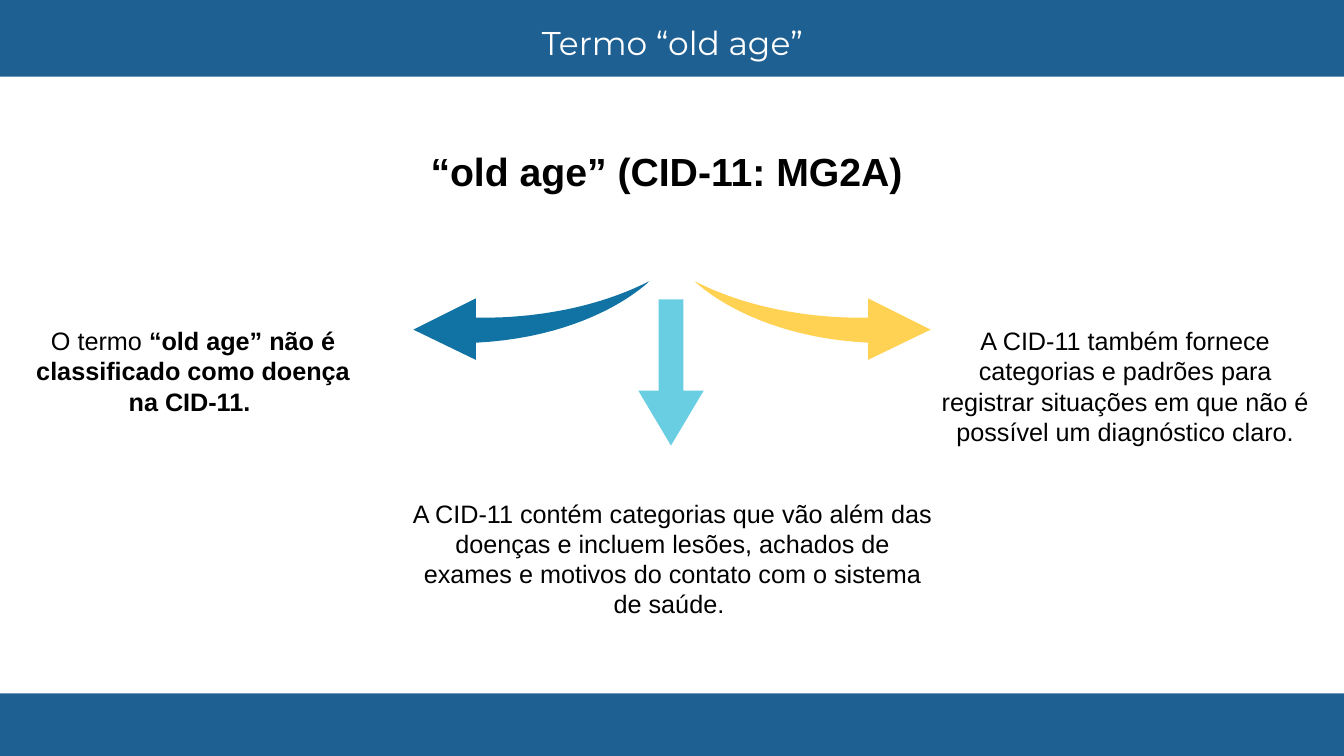
"""Build the slide on the term "old age" in CID-11."""
import dataclasses
import typing

import pptx
import pptx.dml.color
import pptx.enum.shapes
import pptx.enum.text
import pptx.util

SCALE = 9144
WIDTH, HEIGHT = 1333, 750
STEPS = 24
Point = tuple[float, float]


@dataclasses.dataclass(frozen=True)
class Theme:
    """Colours, fonts and type sizes."""
    bar: str = "1F6093"
    left: str = "1073A3"
    right: str = "FFD253"
    down: str = "6ACEE3"
    light: str = "FFFFFF"
    dark: str = "000000"
    head: str = "Montserrat"
    body: str = "Arial"
    title: float = 23.5
    term: float = 28
    note: float = 18


THEME = Theme()


class Box(typing.NamedTuple):
    """Left, top, width and height in px."""
    x: int
    y: int
    w: int
    h: int


@dataclasses.dataclass(frozen=True)
class Block:
    """A filled preset shape."""
    box: Box
    fill: str
    kind: typing.Any = pptx.enum.shapes.MSO_SHAPE.RECTANGLE
    adjust: tuple[float, ...] = ()


@dataclasses.dataclass(frozen=True)
class Label:
    """A centred text, with an optional bold ending."""
    box: Box
    text: str
    strong: str = ""
    size: float = THEME.note
    font: str = THEME.body
    colour: str = THEME.dark
    fixed: bool = False


BLOCKS = (
    Block(Box(0, 0, WIDTH, 76), THEME.bar),
    Block(Box(0, 688, WIDTH, 62), THEME.bar),
    Block(Box(633, 297, 65, 145), THEME.down,
          pptx.enum.shapes.MSO_SHAPE.DOWN_ARROW, (0.38, 0.84)),
)
LABELS = (
    Label(Box(44, 13, 1246, 62), "Termo “old age”", size=THEME.title,
          font=THEME.head, colour=THEME.light, fixed=True),
    Label(Box(416, 141, 501, 57), "", "“old age” (CID-11: MG2A) ", THEME.term),
    Label(Box(17, 318, 349, 101), "O termo ",
          "“old age” não é classificado como doença na CID-11. "),
    Label(Box(395, 489, 544, 131),
          "A CID-11 contém categorias que vão além das doenças e incluem lesões, "
          "achados de exames e motivos do contato com o sistema de saúde. "),
    Label(Box(921, 318, 390, 131),
          "A CID-11 também fornece categorias e padrões para registrar situações "
          "em que não é possível um diagnóstico claro."),
)


def rgb(code: str) -> pptx.dml.color.RGBColor:
    """Return the colour for a hex code."""
    return pptx.dml.color.RGBColor.from_string(code)


def emu(box: Box) -> list[int]:
    """Return a box in EMU."""
    return [side * SCALE for side in box]


def paint(shape: typing.Any, fill: str) -> None:
    """Give a shape a flat fill, with no line or shadow."""
    shape.shadow.inherit = False
    shape.fill.solid()
    shape.fill.fore_color.rgb = rgb(fill)
    shape.line.fill.background()


def draw_block(shapes: typing.Any, block: Block) -> None:
    """Draw a preset shape."""
    shape = shapes.add_shape(block.kind, *emu(block.box))
    for index, value in enumerate(block.adjust):
        shape.adjustments[index] = value
    paint(shape, block.fill)


def curve(a: Point, b: Point, c: Point, d: Point) -> list[Point]:
    """Return points along a cubic curve."""
    points = []
    for step in range(STEPS + 1):
        t = step / STEPS
        u = 1 - t
        parts = (u ** 3, 3 * u * u * t, 3 * u * t * t, t ** 3)
        x, y = (sum(k * p[i] for k, p in zip(parts, (a, b, c, d))) for i in (0, 1))
        points.append((x, y))
    return points


def draw_arrow(shapes: typing.Any, fill: str, flip: bool) -> None:
    """Draw a curved arrow to the right, or its mirror to the left."""
    tail = (689, 279)
    points = [(923, 327), (861, 357),
              *curve((861, 340), (743, 334), tail, tail),
              *curve(tail, (754, 312), (826, 316), (861, 315)),
              (861, 296)]
    spots = [((WIDTH - x if flip else x) * SCALE, y * SCALE) for x, y in points]
    path = shapes.build_freeform(*spots[0], scale=1.0)
    path.add_line_segments(spots[1:], close=True)
    paint(path.convert_to_shape(), fill)


def draw_label(shapes: typing.Any, label: Label) -> None:
    """Draw a text box."""
    frame = shapes.add_textbox(*emu(label.box)).text_frame
    frame.word_wrap = True
    para = frame.paragraphs[0]
    para.alignment = pptx.enum.text.PP_ALIGN.CENTER
    if label.fixed:
        frame.vertical_anchor = pptx.enum.text.MSO_ANCHOR.MIDDLE
        para.line_spacing = 0.9
    else:
        frame.auto_size = pptx.enum.text.MSO_AUTO_SIZE.SHAPE_TO_FIT_TEXT
    para.font.name = label.font
    para.font.size = pptx.util.Pt(label.size)
    para.font.color.rgb = rgb(label.colour)
    for text, bold in ((label.text, False), (label.strong, True)):
        if text:
            run = para.add_run()
            run.text = text
            run.font.bold = bold


def main() -> None:
    """Build and save the slide."""
    deck = pptx.Presentation()
    deck.slide_width, deck.slide_height = WIDTH * SCALE, HEIGHT * SCALE
    shapes = deck.slides.add_slide(deck.slide_layouts[6]).shapes
    for block in BLOCKS:
        draw_block(shapes, block)
    draw_arrow(shapes, THEME.left, True)
    draw_arrow(shapes, THEME.right, False)
    for label in LABELS:
        draw_label(shapes, label)
    deck.save("out.pptx")


if __name__ == "__main__":
    main()
